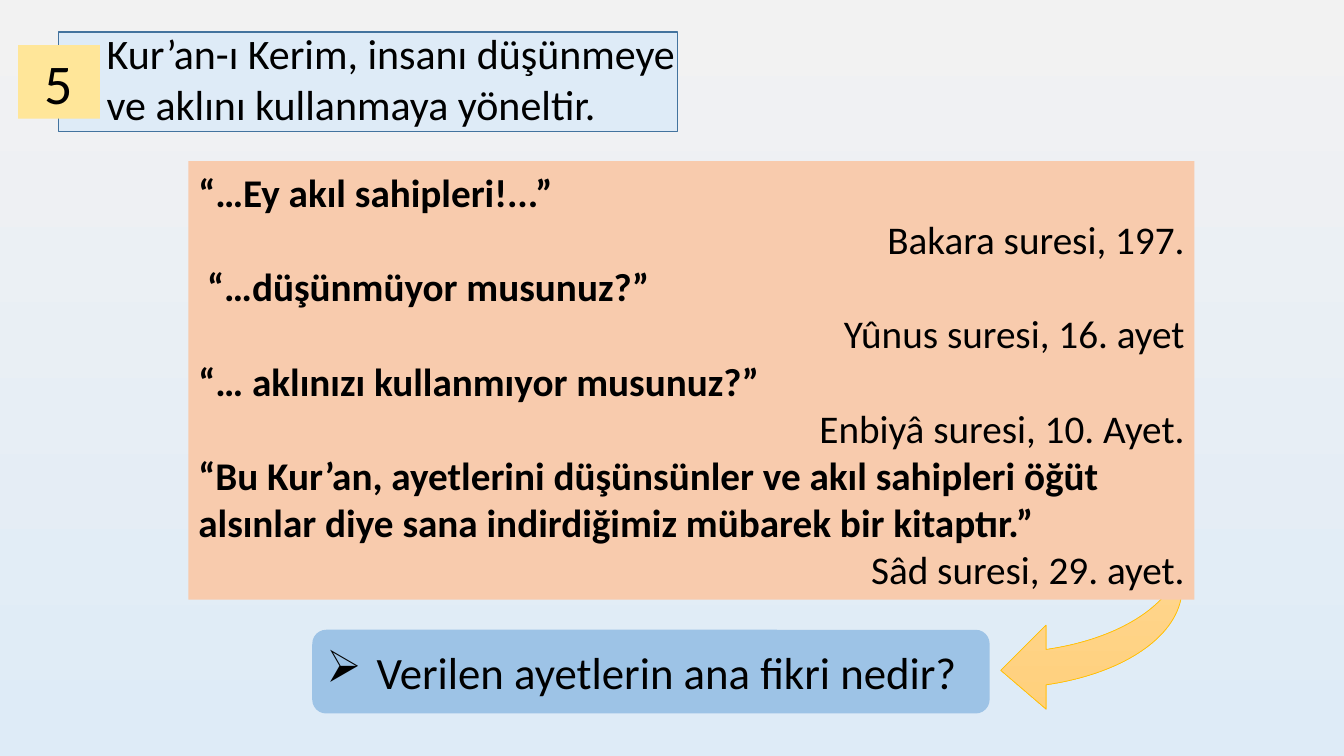
from pptx import Presentation
from pptx.dml.color import RGBColor
from pptx.enum.shapes import MSO_SHAPE as Preset
from pptx.enum.text import MSO_ANCHOR as Anchor, PP_ALIGN as Align
from pptx.oxml.ns import qn
from pptx.util import Cm, Pt
from lxml import etree

BLACK = RGBColor(0x00, 0x00, 0x00)
GREY = RGBColor(0xF2, 0xF2, 0xF2)
PALE_BLUE = RGBColor(0xDE, 0xEB, 0xF7)
MID_BLUE = RGBColor(0x9D, 0xC3, 0xE6)
EDGE_BLUE = RGBColor(0x43, 0x73, 0x9E)
YELLOW = RGBColor(0xFF, 0xE6, 0x99)
PEACH = RGBColor(0xF8, 0xCB, 0xAD)
LIGHT_GOLD = RGBColor(0xFF, 0xDB, 0x9E)
DEEP_GOLD = RGBColor(0xFF, 0xD0, 0x7C)
GOLD = RGBColor(0xFF, 0xC0, 0x00)


def add_box(shapes, preset, left, top, width, height, color=None):
    box = shapes.add_shape(preset, Cm(left), Cm(top), Cm(width), Cm(height))
    box.shadow.inherit = False
    box.line.fill.background()
    if color is not None:
        box.fill.solid()
        box.fill.fore_color.rgb = color
    box.text_frame.word_wrap = True
    box.text_frame.vertical_anchor = Anchor.MIDDLE
    return box


def write(para, text, size, align=Align.LEFT, bold=False):
    para.text = text
    para.alignment = align
    para.font.name = "Calibri"
    para.font.size = Pt(size)
    para.font.bold = bold
    para.font.color.rgb = BLACK


deck = Presentation()
deck.slide_width, deck.slide_height = Cm(33.87), Cm(19.05)
page = deck.slides.add_slide(deck.slide_layouts[6])

# Heading: framed band with its number
heading = page.shapes.add_group_shape()
band = add_box(heading.shapes, Preset.RECTANGLE, 1.47, 0.81, 15.6, 2.51, PALE_BLUE)
band.line.color.rgb = EDGE_BLUE
band.line.width = Pt(1)
number = add_box(heading.shapes, Preset.RECTANGLE, 0.46, 1.14, 2.06, 1.85, YELLOW)
write(number.text_frame.paragraphs[0], "5", 40, Align.CENTER)

title = page.shapes.add_textbox(Cm(2.44), Cm(0.58), Cm(15.82), Cm(2.82))
title.text_frame.word_wrap = True
write(title.text_frame.paragraphs[0],
      "Kur’an-ı Kerim, insanı düşünmeye ve aklını kullanmaya yöneltir.", 30)

# Arrow from the verses to the question
arrow = add_box(page.shapes, Preset.CURVED_LEFT_ARROW, 25.22, 11.4, 4.57, 6.55)
for index, value in enumerate((0.195, 0.463, 0.25)):
    arrow.adjustments[index] = value
arrow.line.color.rgb = GOLD
arrow.line.width = Pt(0.5)

# Vertical gradients
for fill, first, last in ((page.background.fill, GREY, PALE_BLUE),
                          (arrow.fill, LIGHT_GOLD, DEEP_GOLD)):
    fill.gradient()
    fill.gradient_angle = 270
    for stop, position, color in zip(fill.gradient_stops, (0, 1), (first, last)):
        stop.position = position
        stop.color.rgb = color

# Verses, each followed by its source
VERSES = [
    ("“…Ey akıl sahipleri!...”", "Bakara suresi, 197."),
    (" “…düşünmüyor musunuz?”", "Yûnus suresi, 16. ayet"),
    ("“… aklınızı kullanmıyor musunuz?”", "Enbiyâ suresi, 10. Ayet."),
    ("“Bu Kur’an, ayetlerini düşünsünler ve akıl sahipleri öğüt alsınlar "
     "diye sana indirdiğimiz mübarek bir kitaptır.”", "Sâd suresi, 29. ayet."),
]
verses = add_box(page.shapes, Preset.RECTANGLE, 4.75, 4.06, 25.35, 11.05, PEACH)
frame = verses.text_frame
for index, (verse, source) in enumerate(VERSES):
    para = frame.add_paragraph() if index else frame.paragraphs[0]
    write(para, verse, 28, bold=True)
    write(frame.add_paragraph(), source, 28, Align.RIGHT)

# Question with an arrow bullet
question = add_box(page.shapes, Preset.ROUNDED_RECTANGLE, 7.87, 15.87, 17.07, 2.11, MID_BLUE)
para = question.text_frame.paragraphs[0]
write(para, "Verilen ayetlerin ana fikri nedir?", 32)
props = para._p.get_or_add_pPr()
props.set("marL", str(Cm(1.27)))
props.set("indent", str(-Cm(1.27)))
bullet = etree.Element(qn("a:buChar"), char="➢")
props.insert(0, bullet)

deck.save("out.pptx")
